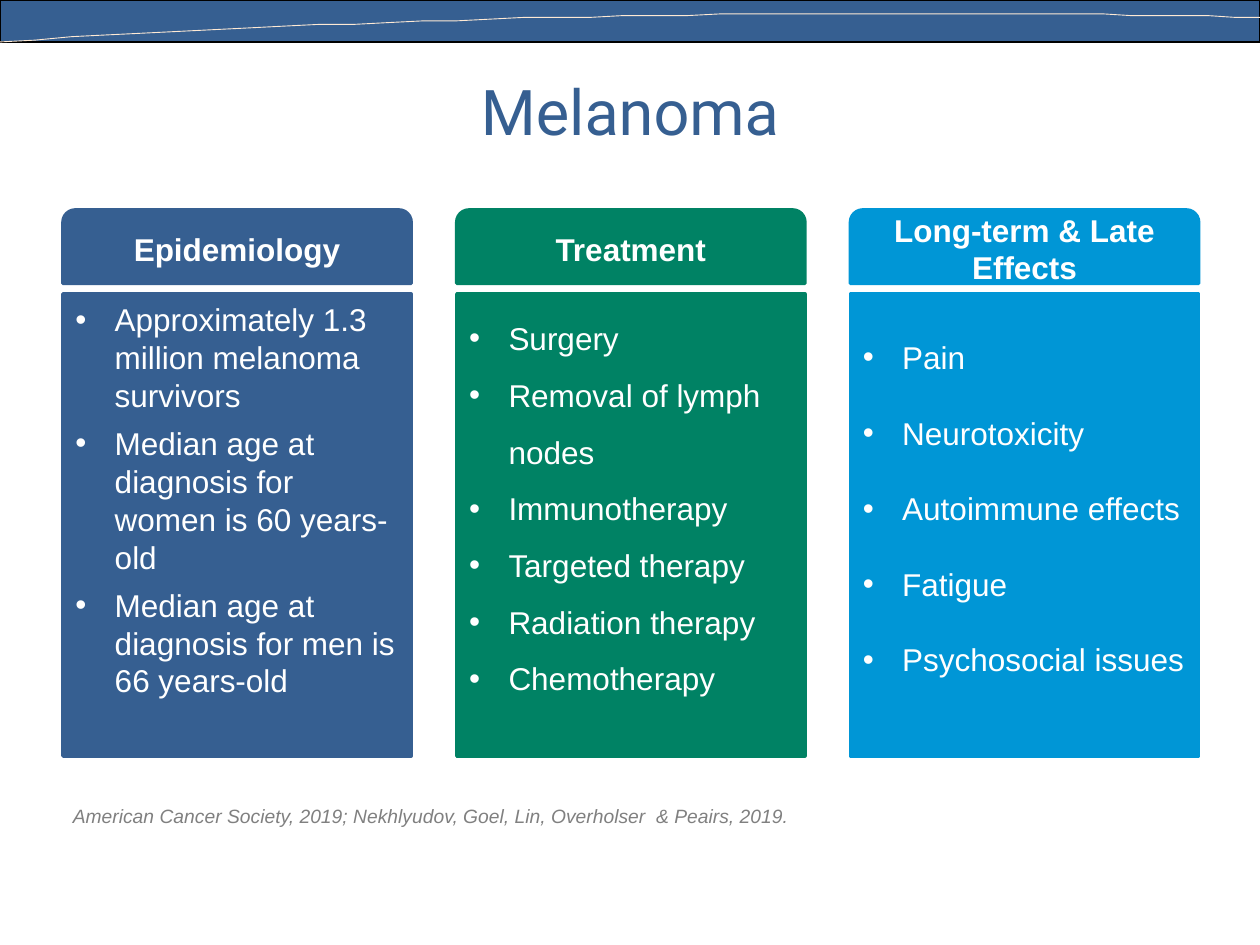
from dataclasses import dataclass

from lxml import etree
from pptx import Presentation
from pptx.dml.color import RGBColor
from pptx.enum.shapes import MSO_SHAPE as Preset
from pptx.enum.text import MSO_ANCHOR as Anchor, MSO_AUTO_SIZE as AutoSize, PP_ALIGN as Align
from pptx.oxml.ns import qn
from pptx.util import Pt


@dataclass(frozen=True)
class Theme:
    blue: str = "365F91"
    green: str = "008264"
    sky: str = "0096D6"
    white: str = "FFFFFF"
    black: str = "000000"
    cream: str = "FFEAD5"
    grey: str = "808080"
    title_font: str = "Roboto"
    text_font: str = "Arial"
    title_size: float = 36
    text_size: float = 18
    source_size: float = 11


THEME = Theme()
COLUMNS = [
    ("Epidemiology", THEME.blue, 36, 1, 6, [
        "Approximately 1.3 million melanoma survivors",
        "Median age at diagnosis for women is 60 years-old",
        "Median age at diagnosis for men is 66 years-old",
    ]),
    ("Treatment", THEME.green, 261, 1.5, 0, [
        "Surgery",
        "Removal of lymph nodes",
        "Immunotherapy",
        "Targeted therapy",
        "Radiation therapy",
        "Chemotherapy",
    ]),
    ("Long-term & Late Effects", THEME.sky, 486, 2, 0, [
        "Pain",
        "Neurotoxicity",
        "Autoimmune effects",
        "Fatigue",
        "Psychosocial issues",
    ]),
]


def add_span(para, text, size, color, font=THEME.text_font, bold=False, italic=False):
    span = para.add_run()
    span.text = text
    span.font.name = font
    span.font.size = Pt(size)
    span.font.bold = bold
    span.font.italic = italic
    span.font.color.rgb = RGBColor.from_string(color)


def add_panel(page, preset, left, top, width, height, fill, line, weight):
    panel = page.shapes.add_shape(preset, Pt(left), Pt(top), Pt(width), Pt(height))
    panel.shadow.inherit = False
    panel.fill.solid()
    panel.fill.fore_color.rgb = RGBColor.from_string(fill)
    panel.line.color.rgb = RGBColor.from_string(line)
    panel.line.width = Pt(weight)
    panel.text_frame.word_wrap = True
    return panel


def add_bullet(para):
    props = para._p.get_or_add_pPr()
    props.set("marL", str(Pt(22.5)))
    props.set("indent", str(-Pt(22.5)))
    etree.SubElement(props, qn("a:buFont")).set("typeface", THEME.text_font)
    etree.SubElement(props, qn("a:buChar")).set("char", "•")


def curve_point(step, corners):
    weights = ((1 - step) ** 3, 3 * step * (1 - step) ** 2,
               3 * step ** 2 * (1 - step), step ** 3)
    return tuple(sum(w * corner[axis] for w, corner in zip(weights, corners))
                 for axis in (0, 1))


def add_banner(page, left, top, width, height):
    add_panel(page, Preset.RECTANGLE, left, top, width, height,
              THEME.blue, THEME.black, 0.75)
    corners = [(left + width * x, top + height * y)
               for x, y in ((1, 0.42), (0.74, 0.24), (0.38, 0.24), (0, 1))]
    points = [curve_point(i / 40, corners) for i in range(41)]
    builder = page.shapes.build_freeform(*points[0], scale=Pt(1))
    builder.add_line_segments(points[1:], close=False)
    curve = builder.convert_to_shape()
    curve.shadow.inherit = False
    curve.fill.background()
    curve.line.color.rgb = RGBColor.from_string(THEME.cream)
    curve.line.width = Pt(0.5)


def add_title(page, left, top, width, height, text):
    title = page.shapes.title
    title.left, title.top, title.width, title.height = map(Pt, (left, top, width, height))
    frame = title.text_frame
    frame.auto_size = AutoSize.NONE
    frame.vertical_anchor = Anchor.MIDDLE
    para = frame.paragraphs[0]
    para.alignment = Align.CENTER
    add_span(para, text, THEME.title_size, THEME.blue, THEME.title_font)


def add_column(page, left, top, width, height, heading, color, spacing, gap, items):
    header_height, list_offset = 42, 48
    box = add_panel(page, Preset.RECTANGLE, left, top + list_offset, width,
                    height - list_offset, color, color, 2)
    frame = box.text_frame
    frame.vertical_anchor = Anchor.TOP
    for index, item in enumerate(items):
        para = frame.add_paragraph() if index else frame.paragraphs[0]
        add_bullet(para)
        para.alignment = Align.LEFT
        para.line_spacing = float(spacing)
        para.space_before = Pt(gap if index else 0)
        add_span(para, item, THEME.text_size, THEME.white)

    header = add_panel(page, Preset.ROUND_2_SAME_RECTANGLE, left, top, width,
                       header_height, color, color, 2)
    header.text_frame.vertical_anchor = Anchor.MIDDLE
    para = header.text_frame.paragraphs[0]
    para.alignment = Align.CENTER
    add_span(para, heading, THEME.text_size, THEME.white, bold=True)


def add_source(page, left, top, width, height, text):
    box = page.shapes.add_textbox(Pt(left), Pt(top), Pt(width), Pt(height))
    box.text_frame.word_wrap = True
    box.text_frame.auto_size = AutoSize.SHAPE_TO_FIT_TEXT
    add_span(box.text_frame.paragraphs[0], text, THEME.source_size, THEME.grey, italic=True)


def main():
    deck = Presentation()
    deck.slide_width, deck.slide_height = Pt(720), Pt(540)
    page = deck.slides.add_slide(deck.slide_layouts[5])
    add_banner(page, 0, 0, 720, 24)
    add_title(page, 36, 24, 648, 78, "Melanoma")
    for heading, color, left, spacing, gap, items in COLUMNS:
        add_column(page, left, 120, 199, 312, heading, color, spacing, gap, items)
    add_source(page, 34.5, 456, 649.5, 21,
               "American Cancer Society, 2019; Nekhlyudov, Goel, Lin, Overholser  & Peairs, 2019.")
    deck.save("out.pptx")


if __name__ == "__main__":
    main()
